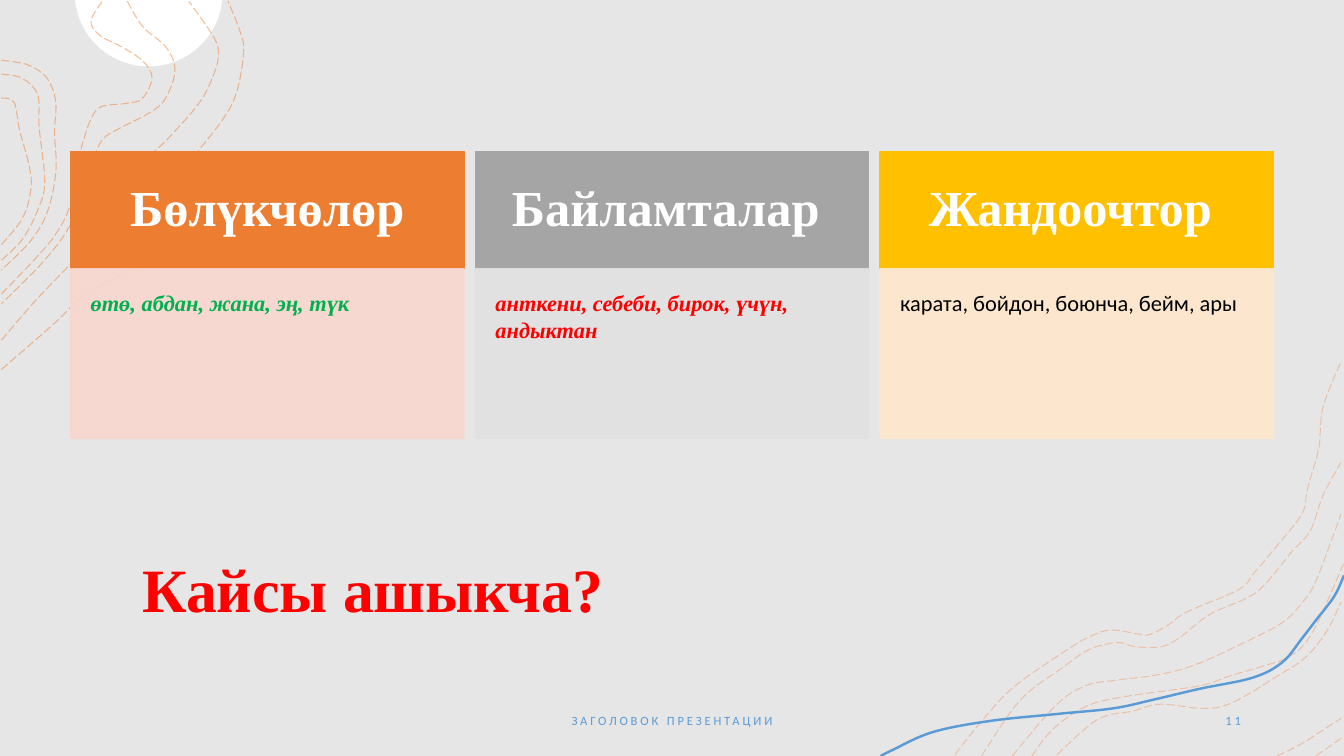
import math
from dataclasses import dataclass

from lxml import etree
from pptx import Presentation
from pptx.dml.color import RGBColor
from pptx.enum import dml, shapes, text
from pptx.oxml.ns import qn
from pptx.util import Pt

COLORS = {
    "background": "E7E6E6", "white": "FFFFFF", "black": "000000",
    "orange": "ED7D31", "gray": "A5A5A5", "gold": "FFC000",
    "pale_orange": "F8D7CE", "pale_gray": "E1E1E1", "pale_gold": "FFE8CC",
    "blue": "5B9BD5", "red": "FF0000", "green": "00B050",
}
SERIF, SANS = "Times New Roman", "Calibri"
Points = list[tuple[float, float]]


@dataclass
class Card:
    heading: str
    words: str
    color: str
    pale: str
    ink: str
    font: str = SERIF
    accent: bool = True


CARDS = [
    Card("Бөлүкчөлөр", "өтө, абдан, жана, эң, түк", "orange", "pale_orange", "green"),
    Card("Байламталар ", "анткени, себеби, бирок, үчүн, андыктан", "gray", "pale_gray", "red"),
    Card("Жандоочтор ", "карата, бойдон, боюнча, бейм, ары", "gold", "pale_gold", "black",
         SANS, False),
]

# Knots of the contour lines, in points
TOP_CONTOURS: list[Points] = [
    [(1, 264), (40, 230), (61, 210), (91, 194), (102, 184), (114, 161), (130, 124),
     (158, 87), (169, 66), (174, 38), (172, 24), (163, 1)],
    [(1, 243), (27, 213), (52, 187), (71, 166), (87, 141), (98, 121), (120, 99), (142, 74),
     (152, 55), (156, 40), (153, 27), (135, 1)],
    [(91, 1), (102, 19), (118, 33), (125, 48), (121, 65), (111, 78), (83, 93), (74, 99),
     (68, 110), (60, 136), (49, 163), (30, 188), (1, 217)],
    [(1, 210), (25, 185), (40, 167), (50, 147), (55, 119), (60, 99), (66, 83), (73, 76),
     (89, 74), (101, 71), (108, 59), (107, 50), (99, 41), (86, 33), (71, 25), (65, 15), (73, 1)],
    [(1, 43), (19, 46), (31, 53), (37, 62), (40, 75), (39, 95), (40, 122), (34, 151),
     (22, 172), (1, 193)],
    [(1, 53), (16, 56), (27, 68), (28, 91), (32, 130), (27, 150), (16, 171), (1, 186)],
    [(1, 70), (10, 73), (14, 93), (21, 119), (22, 136), (16, 156), (1, 175)],
]
BOTTOM_CONTOURS: list[Points] = [
    [(682, 539), (703, 513), (725, 490), (764, 463), (780, 454), (794, 450), (814, 453),
     (822, 453), (835, 446), (848, 437), (885, 421), (896, 409), (912, 390), (930, 367),
     (934, 349), (942, 320), (945, 291), (958, 258)],
    [(701, 540), (729, 500), (759, 477), (778, 464), (798, 459), (811, 462), (829, 462),
     (842, 456), (864, 439), (891, 427), (904, 417), (922, 395), (936, 379), (945, 354),
     (958, 330)],
    [(940, 540), (960, 526)],
    [(912, 540), (930, 531), (958, 513)],
    [(755, 539), (784, 514), (809, 508), (829, 503), (859, 506), (880, 502), (914, 482),
     (932, 470), (947, 452), (958, 430)],
    [(737, 540), (752, 521), (775, 505), (801, 498), (856, 490), (878, 483), (905, 475),
     (919, 470), (931, 461), (942, 443), (960, 402)],
    [(723, 540), (754, 504), (775, 490), (796, 486), (827, 482), (856, 474), (899, 454),
     (917, 444), (929, 432), (940, 415), (958, 367)],
]
RIVER: Points = [
    (629, 540), (637, 536), (666, 523), (707, 515), (755, 510), (795, 506), (823, 500),
    (857, 492), (895, 484), (916, 473), (930, 456), (940, 443), (953, 426), (960, 411)]


def paint(fill, color: str, alpha: int = 100) -> None:
    """Solid fill with an opacity in percent."""
    fill.solid()
    fill.fore_color.rgb = RGBColor.from_string(COLORS[color])
    if alpha < 100:
        for tone in fill._xPr.iter(qn("a:srgbClr")):
            etree.SubElement(tone, qn("a:alpha"), val=str(alpha * 1000))


def draw_curve(slide, knots: Points):
    """Smooth freeform through the knots, its segments turned into Bezier curves."""
    start, *rest = [(Pt(x), Pt(y)) for x, y in knots]
    builder = slide.shapes.build_freeform(*start)
    builder.add_line_segments(rest, close=False)
    curve = builder.convert_to_shape()
    curve.shadow.inherit = False
    local = [(int(p.get("x")), int(p.get("y"))) for p in curve._element.iter(qn("a:pt"))]
    ends = [local[0], *local, local[-1]]
    segments = list(curve._element.iter(qn("a:lnTo")))
    for segment, a, b, c, d in zip(segments, ends, ends[1:], ends[2:], ends[3:]):
        segment.tag = qn("a:cubicBezTo")
        leaving = [q + (r - p) / 6 for p, q, r in zip(a, b, c)]
        arriving = [r - (s - q) / 6 for q, r, s in zip(b, c, d)]
        for place, (x, y) in enumerate((leaving, arriving)):
            handle = etree.Element(qn("a:pt"), x=str(round(x)), y=str(round(y)))
            segment.insert(place, handle)
    return curve


def draw_line(slide, knots: Points, color: str, width: float, alpha: int = 100,
              dash=None) -> None:
    curve = draw_curve(slide, knots)
    curve.fill.background()
    curve.line.width = Pt(width)
    paint(curve.line.fill, color, alpha)
    if dash:
        curve.line.dash_style = dash


def write(shape, content: str, *, size: float, color: str, font: str = SANS,
          bold: bool = False, italic: bool = False, align=text.PP_ALIGN.LEFT,
          anchor=text.MSO_ANCHOR.MIDDLE, inset: tuple[float, float] = (7.2, 3.6),
          line_spacing: float = 1.0, tracking: float = 0) -> None:
    frame = shape.text_frame
    frame.word_wrap, frame.auto_size = True, text.MSO_AUTO_SIZE.NONE
    frame.vertical_anchor = anchor
    frame.margin_left = frame.margin_right = Pt(inset[0])
    frame.margin_top = frame.margin_bottom = Pt(inset[1])
    paragraph = frame.paragraphs[0]
    paragraph.alignment, paragraph.line_spacing = align, line_spacing
    run = paragraph.add_run()
    run.text = content
    run.font.name, run.font.size = font, Pt(size)
    run.font.bold, run.font.italic = bold, italic
    run.font.color.rgb = RGBColor.from_string(COLORS[color])
    if tracking:
        run._r.get_or_add_rPr().set("spc", str(round(tracking * 100)))


def draw_panel(slide, left: float, top: float, width: float, height: float, color: str,
               alpha: int = 100):
    panel = slide.shapes.add_shape(shapes.MSO_SHAPE.RECTANGLE,
                                   Pt(left), Pt(top), Pt(width), Pt(height))
    panel.shadow.inherit = False
    panel.line.width = Pt(1)
    paint(panel.fill, color, alpha)
    paint(panel.line.fill, color, alpha)
    return panel


def draw_card(slide, card: Card, left: float) -> None:
    header = draw_panel(slide, left, 108, 281, 84, card.color)
    write(header, card.heading, size=36, color="white", font=SERIF, bold=True,
          align=text.PP_ALIGN.CENTER, inset=(22, 22), line_spacing=0.9)
    body = draw_panel(slide, left, 192, 281, 121, card.pale, 90)
    write(body, card.words, size=16, color=card.ink, font=card.font, bold=card.accent,
          italic=card.accent, anchor=text.MSO_ANCHOR.TOP, inset=(14.4, 14.4))


def main() -> None:
    deck = Presentation()
    deck.slide_width, deck.slide_height = Pt(960), Pt(540)
    slide = deck.slides.add_slide(deck.slide_layouts[5])
    paint(slide.background.fill, "background")

    # Half disc cut by the top edge
    arc = [math.radians(angle) for angle in range(6, 175, 14)]
    disc = draw_curve(slide, [(106.2 + 53 * math.cos(a), 53 * math.sin(a) - 5.54) for a in arc])
    paint(disc.fill, "white")
    disc.line.fill.background()

    # Contour lines in the two corners
    for contours, alpha in ((TOP_CONTOURS, 50), (BOTTOM_CONTOURS, 35)):
        for knots in contours:
            draw_line(slide, knots, "orange", 0.75, alpha, dml.MSO_LINE.LONG_DASH)
    draw_line(slide, RIVER, "blue", 1.75)

    # Question
    question = slide.shapes.title
    question.left, question.top, question.width, question.height = map(
        Pt, (94.3, 364.3, 786, 118))
    write(question, "Кайсы ашыкча?", size=44, color="red", font=SERIF, bold=True,
          line_spacing=0.9)

    # Footer and slide number
    for content, left, width, align in (
            ("ЗАГОЛОВОК ПРЕЗЕНТАЦИИ", 318, 324, text.PP_ALIGN.CENTER),
            ("11", 780, 113.5, text.PP_ALIGN.RIGHT)):
        footer = slide.shapes.add_textbox(Pt(left), Pt(500.5), Pt(width), Pt(28.8))
        write(footer, content, size=9, color="blue", align=align, tracking=2)

    # Word cards
    for index, card in enumerate(CARDS):
        draw_card(slide, card, 50.4 + 289.1 * index)

    deck.save("out.pptx")


if __name__ == "__main__":
    main()
